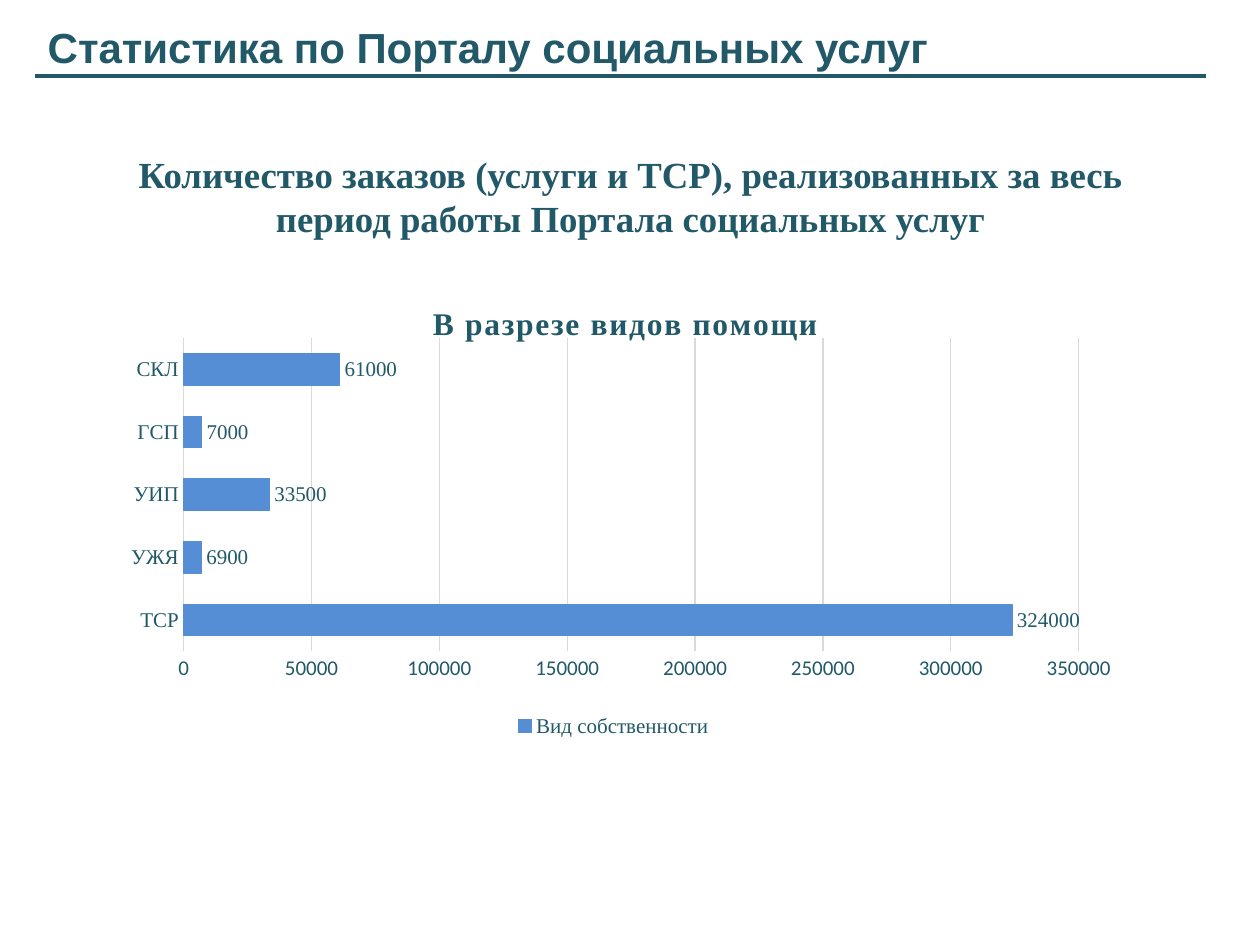
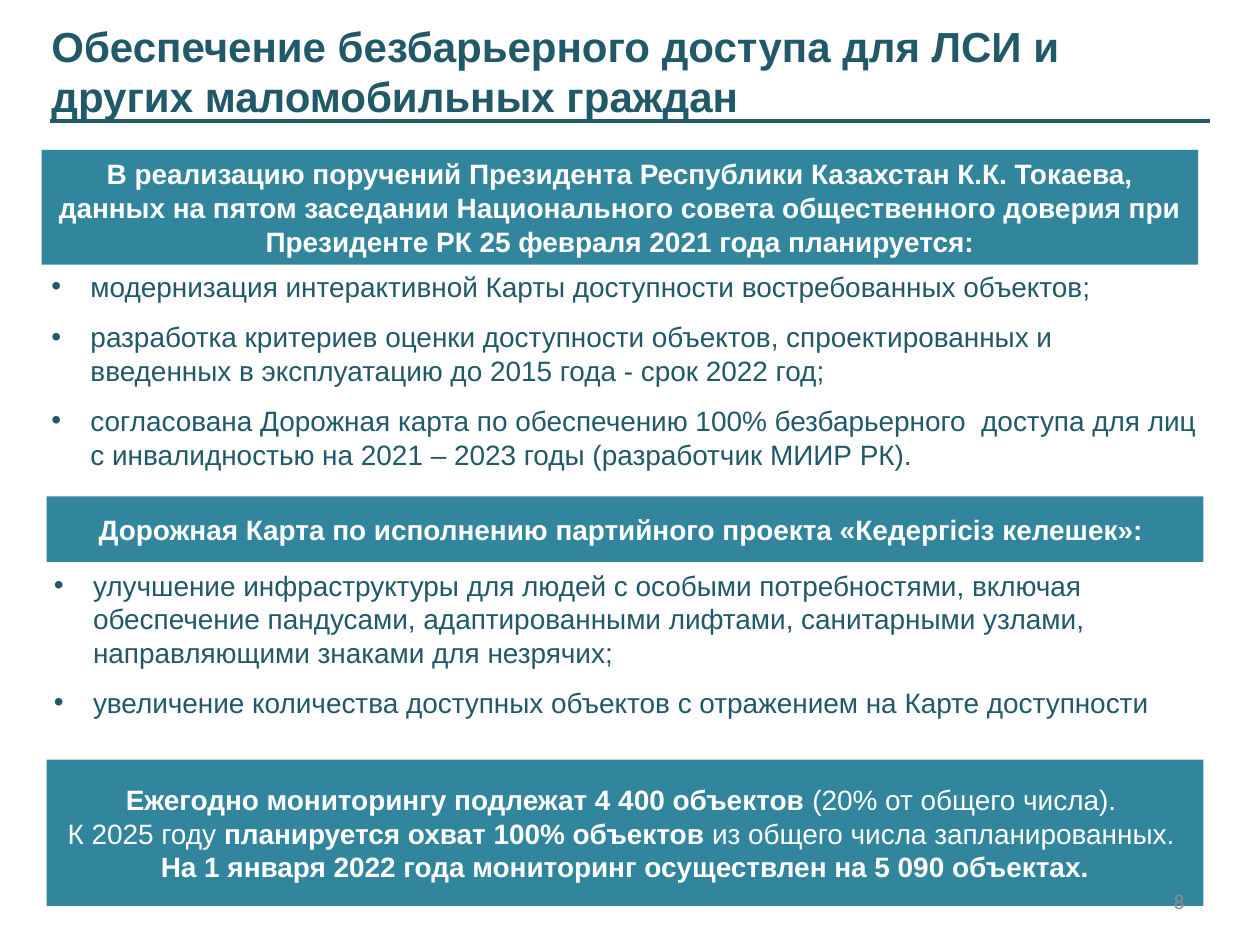
from dataclasses import dataclass
from typing import Any

from lxml import etree
from pptx import Presentation
from pptx.chart.data import CategoryChartData
from pptx.dml.color import RGBColor
from pptx.enum.chart import XL_CHART_TYPE as ChartType
from pptx.enum.chart import XL_LABEL_POSITION as LabelPosition
from pptx.enum.chart import XL_LEGEND_POSITION as LegendPosition
from pptx.enum.chart import XL_TICK_MARK as TickMark
from pptx.enum.shapes import MSO_CONNECTOR as Connector
from pptx.enum.shapes import MSO_SHAPE as Preset
from pptx.enum.text import MSO_ANCHOR as Anchor
from pptx.enum.text import PP_ALIGN as Align
from pptx.oxml import parse_xml
from pptx.oxml.ns import nsdecls, qn
from pptx.util import Inches, Pt

DARK, TEAL, WHITE = "215968", "31859C", "FFFFFF"
BLUE, GRID, GREY = "558ED5", "D9D9D9", "8C8C8C"
SANS, SERIF, CALIBRI = "Arial", "Times New Roman", "Calibri"

HEADING = {"name": SANS, "size": Pt(24), "bold": True, "color": DARK}
BODY = {"name": SANS, "size": Pt(16), "bold": False, "color": DARK}
BAND = {"name": SANS, "size": Pt(16), "bold": True, "color": WHITE}
BAND_PLAIN = {**BAND, "bold": False}
SUBTITLE = {"name": SERIF, "size": Pt(21), "bold": True, "color": DARK}
CHART_TITLE = {"name": SERIF, "size": Pt(18), "bold": True, "color": DARK}
CHART_TEXT = {"name": SERIF, "size": Pt(12), "bold": False, "color": DARK}
VALUE_TEXT = {**CHART_TEXT, "name": CALIBRI}
PAGE_NUMBER = {"name": CALIBRI, "size": Pt(12), "color": GREY}


@dataclass(frozen=True)
class Frame:
    """A rectangle on the page, in inches."""
    left: float
    top: float
    width: float
    height: float

    def lengths(self) -> list[Any]:
        """Return the four sides as lengths."""
        return [Inches(v) for v in (self.left, self.top, self.width, self.height)]


@dataclass(frozen=True)
class Span:
    """A piece of text with one format."""
    text: str
    style: dict[str, Any]


@dataclass(frozen=True)
class Band:
    """A filled band with centred lines."""
    frame: Frame
    lines: list[list[Span]]


@dataclass(frozen=True)
class BulletList:
    """A bulleted list."""
    frame: Frame
    items: list[str]


def rgb(value: str) -> RGBColor:
    """Turn a hex string into a colour."""
    return RGBColor.from_string(value)


def format_font(font: Any, style: dict[str, Any]) -> None:
    """Apply a dict of format values to a font."""
    for key, value in style.items():
        if key == "color":
            font.color.rgb = rgb(value)
        else:
            setattr(font, key, value)


def format_line(line: Any, color: str, width: float) -> None:
    """Set the colour and the width of a line."""
    line.color.rgb = rgb(color)
    line.width = Pt(width)


def write(box: Any, lines: list[list[Span]], **layout: Any) -> None:
    """Fill a box with paragraphs of spans."""
    frame = box.text_frame
    frame.word_wrap = True
    frame.vertical_anchor = layout.get("anchor", Anchor.TOP)
    for index, spans in enumerate(lines):
        para = frame.paragraphs[0] if index == 0 else frame.add_paragraph()
        para.alignment = layout.get("align", Align.LEFT)
        for span in spans:
            run = para.add_run()
            run.text = span.text
            format_font(run.font, span.style)


def add_text(page: Any, frame: Frame, lines: list[list[Span]], **layout: Any) -> Any:
    """Add a text box."""
    box = page.shapes.add_textbox(*frame.lengths())
    write(box, lines, **layout)
    return box


def add_heading(page: Any, text: str, frame: Frame, left: float, right: float, rule_y: float) -> None:
    """Add the page heading and the rule below it."""
    add_text(page, frame, [[Span(text, HEADING)]])
    rule = page.shapes.add_connector(
        Connector.STRAIGHT, Inches(left), Inches(rule_y), Inches(right), Inches(rule_y))
    format_line(rule.line, DARK, 2.25)
    etree.SubElement(rule.element.spPr, qn("a:effectLst"))


def add_band(page: Any, band: Band) -> None:
    """Add a filled band."""
    box = page.shapes.add_shape(Preset.RECTANGLE, *band.frame.lengths())
    box.shadow.inherit = False
    box.fill.solid()
    box.fill.fore_color.rgb = rgb(TEAL)
    box.line.fill.background()
    write(box, band.lines, anchor=Anchor.MIDDLE, align=Align.CENTER)


def add_bullets(page: Any, bullets: BulletList) -> None:
    """Add a list with hanging bullets."""
    box = add_text(page, bullets.frame, [[Span(item, BODY)] for item in bullets.items])
    for para in box.text_frame.paragraphs:
        para.space_after = Pt(9.5)
        properties = para._p.get_or_add_pPr()
        properties.set("marL", str(Inches(0.31)))
        properties.set("indent", str(-Inches(0.31)))
        etree.SubElement(properties, qn("a:buFont"), typeface=SANS)
        etree.SubElement(properties, qn("a:buChar"), char="•")


def place(part: Any, index: int, **values: Any) -> None:
    """Give a chart part a manual layout."""
    for old in part.findall(qn("c:layout")):
        part.remove(old)
    fields = "".join(f'<c:{key} val="{value}"/>' for key, value in values.items())
    part.insert(index, parse_xml(
        f'<c:layout {nsdecls("c")}><c:manualLayout>{fields}</c:manualLayout></c:layout>'))


def add_orders_chart(page: Any) -> None:
    """Add the bar chart of orders by kind of help."""
    data = CategoryChartData()
    data.categories = ["ТСР", "УЖЯ", "УИП", "ГСП", "СКЛ"]
    data.add_series("Вид собственности", [324000, 6900, 33500, 7000, 61000])
    frame = Frame(0.76, 2.18, 8.22, 3.71)
    chart = page.shapes.add_chart(ChartType.BAR_CLUSTERED, *frame.lengths(), data).chart
    format_font(chart.font, {"name": CALIBRI, "size": Pt(10)})

    title = chart.chart_title
    run = title.text_frame.paragraphs[0].add_run()
    run.text = "В разрезе видов помощи"
    format_font(run.font, CHART_TITLE)
    run._r.get_or_add_rPr().set("spc", "100")
    place(title._element, 1, xMode="edge", yMode="edge", x=0.32, y=0.05)
    place(chart._chartSpace.chart.plotArea, 0, layoutTarget="inner", xMode="edge",
          yMode="edge", x=0.085, y=0.136, w=0.864, h=0.67)

    plot = chart.plots[0]
    plot.gap_width = 100
    plot.vary_by_categories = False
    series = plot.series[0]
    series.format.fill.solid()
    series.format.fill.fore_color.rgb = rgb(BLUE)
    format_line(series.format.line, BLUE, 0.75)
    plot.has_data_labels = True
    labels = plot.data_labels
    labels.show_value = True
    labels.position = LabelPosition.OUTSIDE_END
    format_font(labels.font, CHART_TEXT)

    for axis, style in ((chart.category_axis, CHART_TEXT), (chart.value_axis, VALUE_TEXT)):
        axis.major_tick_mark = axis.minor_tick_mark = TickMark.NONE
        format_font(axis.tick_labels.font, style)
    format_line(chart.category_axis.format.line, GRID, 0.75)
    chart.value_axis.format.line.fill.background()
    format_line(chart.value_axis.major_gridlines.format.line, GRID, 0.75)

    chart.has_legend = True
    chart.legend.position = LegendPosition.BOTTOM
    chart.legend.include_in_layout = False
    format_font(chart.legend.font, CHART_TEXT)


BANDS = [
    Band(Frame(0.33, 1.19, 9.18, 0.91), [[Span(
        "В реализацию поручений Президента Республики Казахстан К.К. Токаева, данных на пятом "
        "заседании Национального совета общественного доверия при Президенте РК "
        "25 февраля 2021 года планируется:", BAND)]]),
    Band(Frame(0.37, 3.94, 9.18, 0.52), [[Span(
        "Дорожная Карта по исполнению партийного проекта «Кедергісіз келешек»: ", BAND)]]),
    Band(Frame(0.37, 6.03, 9.18, 1.16), [
        [Span("Ежегодно мониторингу подлежат 4 400 объектов ", BAND),
         Span("(20% от общего числа). ", BAND_PLAIN)],
        [Span("К 2025 году ", BAND_PLAIN), Span("планируется охват 100% объектов ", BAND),
         Span("из общего числа запланированных. ", BAND_PLAIN)],
        [Span("На 1 января 2022 года мониторинг осуществлен на 5 090 объектах.", BAND)],
    ]),
]

LISTS = [
    BulletList(Frame(0.31, 2.09, 9.29, 1.72), [
        "модернизация интерактивной Карты доступности востребованных объектов;",
        "разработка критериев оценки доступности объектов, спроектированных и введенных "
        "в эксплуатацию до 2015 года - срок 2022 год;",
        "согласована Дорожная карта по обеспечению 100% безбарьерного  доступа для лиц "
        "с инвалидностью на 2021 – 2023 годы (разработчик МИИР РК).",
    ]),
    BulletList(Frame(0.33, 4.46, 9.15, 1.31), [
        "улучшение инфраструктуры для людей с особыми потребностями, включая обеспечение "
        "пандусами, адаптированными лифтами, санитарными узлами, направляющими знаками "
        "для незрячих;",
        "увеличение количества доступных объектов с отражением на Карте доступности",
    ]),
]


def build_statistics(page: Any) -> None:
    """Build the page with portal statistics."""
    add_text(page, Frame(0.76, 1.01, 8.49, 1.09), [[Span(
        "Количество заказов (услуги и ТСР), реализованных за весь период работы "
        "Портала социальных услуг", SUBTITLE)]], anchor=Anchor.MIDDLE, align=Align.CENTER)
    add_orders_chart(page)
    add_heading(page, "Статистика по Порталу социальных услуг",
                Frame(0.28, 0.12, 9.45, 0.5), 0.28, 9.57, 0.6)


def build_access(page: Any) -> None:
    """Build the page on barrier-free access."""
    add_heading(page, "Обеспечение безбарьерного доступа для ЛСИ и других маломобильных граждан",
                Frame(0.31, 0.11, 9.36, 0.91), 0.4, 9.6, 0.96)
    for band in BANDS:
        add_band(page, band)
    for bullets in LISTS:
        add_bullets(page, bullets)
    add_text(page, Frame(7.17, 6.95, 2.33, 0.4), [[Span("8", PAGE_NUMBER)]],
             anchor=Anchor.MIDDLE, align=Align.RIGHT)


def main() -> None:
    """Build and save the deck."""
    deck = Presentation()
    deck.slide_width, deck.slide_height = Inches(10), Inches(7.5)
    for build in (build_statistics, build_access):
        build(deck.slides.add_slide(deck.slide_layouts[6]))
    deck.save("out.pptx")


if __name__ == "__main__":
    main()
